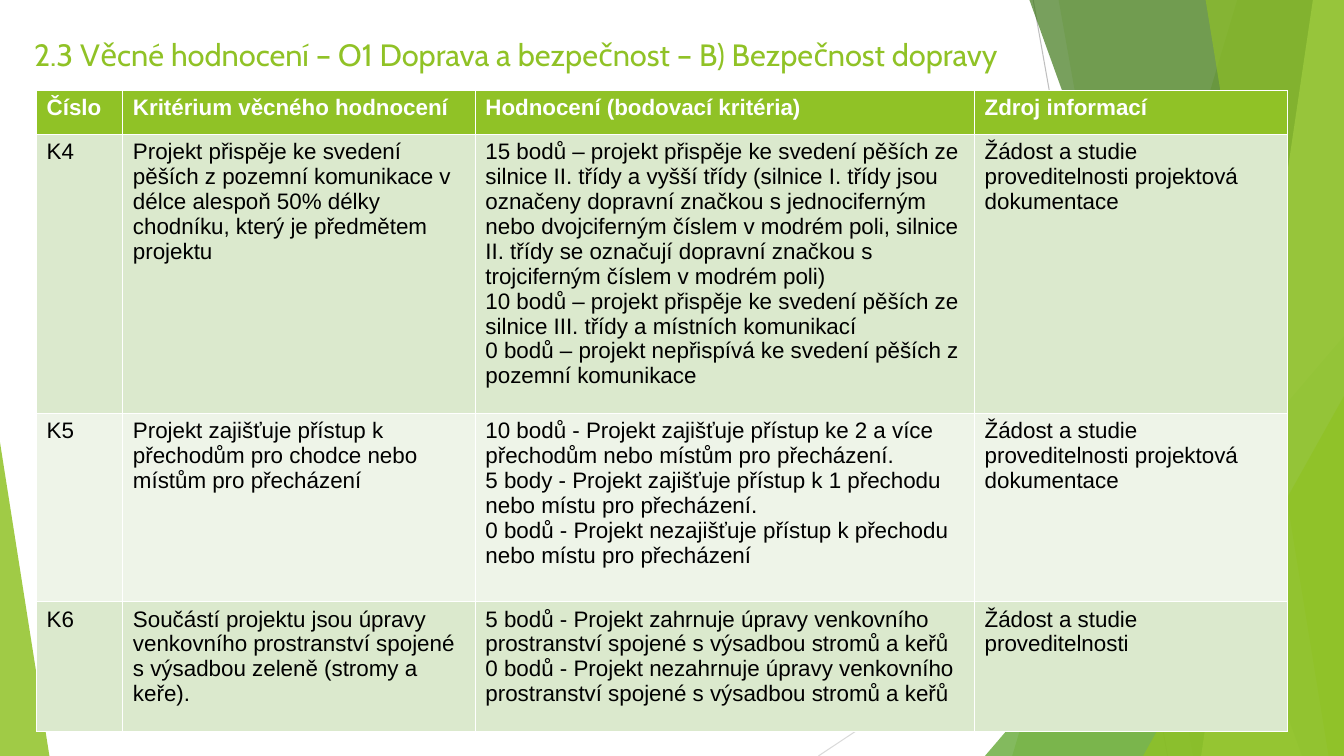
from dataclasses import dataclass

import lxml.etree
import pptx
import pptx.dml.color
import pptx.enum.shapes
import pptx.enum.text
import pptx.oxml.ns
import pptx.util

Pt = pptx.util.Pt
RGBColor = pptx.dml.color.RGBColor
qn = pptx.oxml.ns.qn

WHITE = RGBColor(0xFF, 0xFF, 0xFF)
BLACK = RGBColor(0x00, 0x00, 0x00)
LIME = RGBColor(0x90, 0xC2, 0x26)
GREEN = RGBColor(0x54, 0xA0, 0x21)
FOREST = RGBColor(0x3F, 0x78, 0x19)
PALE_LIME = RGBColor(0xC0, 0xE4, 0x74)
GRAY = RGBColor(0xBF, 0xBF, 0xBF)
LIGHT_GRAY = RGBColor(0xD9, 0xD9, 0xD9)
BAND_DARK = RGBColor(0xDB, 0xE9, 0xCD)
BAND_LIGHT = RGBColor(0xEE, 0xF4, 0xE8)

WIDTH, HEIGHT = 960, 540
BLEED = -0.6


@dataclass(frozen=True)
class Ray:
    start: tuple[float, float]
    end: tuple[float, float]
    color: RGBColor


@dataclass(frozen=True)
class Facet:
    top_left: float
    bottom_left: float
    color: RGBColor
    opacity: int


@dataclass(frozen=True)
class Triangle:
    left: float
    top: float
    width: float
    apex: float
    color: RGBColor
    opacity: int


RAYS = [
    Ray((738, 0), (834, HEIGHT), GRAY),
    Ray((WIDTH, 290), (584.6, HEIGHT), LIGHT_GRAY),
]
DECORATION = [
    Facet(884, 723, LIME, 30),
    Facet(756, 852, LIME, 20),
    Triangle(703.5, 240, 256.5, 1, GREEN, 72),
    Facet(735, 929.5, FOREST, 70),
    Facet(938, 858, PALE_LIME, 70),
    Facet(861, 949, LIME, 65),
    Triangle(816.5, 283, 143.5, 1, LIME, 80),
    Triangle(0, 316, 35.3, 0, LIME, 85),
]

TITLE = "2.3 Věcné hodnocení – O1 Doprava a bezpečnost – B) Bezpečnost dopravy"
COLUMN_WIDTHS = [61.6, 251.8, 356.6, 223.3]
ROW_HEIGHTS = [31.4, 197.6, 134.6, 92.8]
ROW_FILLS = [LIME, BAND_DARK, BAND_LIGHT, BAND_DARK]
CRITERIA = [
    ["Číslo", "Kritérium věcného hodnocení", "Hodnocení (bodovací kritéria)", "Zdroj informací"],
    [
        "K4",
        "Projekt přispěje ke svedení pěších z pozemní komunikace v délce alespoň 50% délky "
        "chodníku, který je předmětem projektu",
        "15 bodů – projekt přispěje ke svedení pěších ze silnice II. třídy a vyšší třídy "
        "(silnice I. třídy jsou označeny dopravní značkou s jednociferným nebo dvojciferným "
        "číslem v modrém poli, silnice II. třídy se označují dopravní značkou s trojciferným "
        "číslem v modrém poli)\n"
        "10 bodů – projekt přispěje ke svedení pěších ze silnice III. třídy a místních komunikací\n"
        "0 bodů – projekt nepřispívá ke svedení pěších z pozemní komunikace",
        "Žádost a studie proveditelnosti projektová dokumentace",
    ],
    [
        "K5",
        "Projekt zajišťuje přístup k přechodům pro chodce nebo místům pro přecházení",
        "10 bodů - Projekt zajišťuje přístup ke 2 a více přechodům nebo místům pro přecházení.\n"
        "5 body - Projekt zajišťuje přístup k 1 přechodu nebo místu pro přecházení.\n"
        "0 bodů - Projekt nezajišťuje přístup k přechodu nebo místu pro přecházení",
        "Žádost a studie proveditelnosti projektová dokumentace",
    ],
    [
        "K6",
        "Součástí projektu jsou úpravy venkovního prostranství spojené s výsadbou zeleně "
        "(stromy a keře).",
        "5 bodů - Projekt zahrnuje úpravy venkovního prostranství spojené s výsadbou stromů a keřů\n"
        "0 bodů - Projekt nezahrnuje úpravy venkovního prostranství spojené s výsadbou stromů a keřů",
        "Žádost a studie proveditelnosti",
    ],
]


def write_text(frame, text: str, color: RGBColor, formats: dict) -> None:
    frame.text = text
    for para in frame.paragraphs:
        for span in para.runs:
            for name, value in formats.items():
                setattr(span.font, name, value)
            span.font.color.rgb = color


def draw_ray(page, ray: Ray) -> None:
    line = page.shapes.add_connector(
        pptx.enum.shapes.MSO_CONNECTOR.STRAIGHT, *map(Pt, ray.start + ray.end)
    )
    line.line.color.rgb = ray.color
    line.line.width = Pt(0.75)
    lxml.etree.SubElement(line._element.spPr, qn("a:effectLst"))


def paint(shape, color: RGBColor, opacity: int) -> None:
    shape.shadow.inherit = False
    shape.line.fill.background()
    shape.fill.solid()
    shape.fill.fore_color.rgb = color
    tint = shape._element.spPr.find(qn("a:solidFill"))[0]
    lxml.etree.SubElement(tint, qn("a:alpha"), val=str(opacity * 1000))


def draw_facet(page, facet: Facet) -> None:
    outline = page.shapes.build_freeform(facet.top_left, BLEED, scale=Pt(1))
    outline.add_line_segments(
        [(WIDTH, BLEED), (WIDTH, HEIGHT), (facet.bottom_left, HEIGHT)], close=True
    )
    paint(outline.convert_to_shape(), facet.color, facet.opacity)


def draw_triangle(page, triangle: Triangle) -> None:
    shape = page.shapes.add_shape(
        pptx.enum.shapes.MSO_SHAPE.ISOSCELES_TRIANGLE,
        Pt(triangle.left), Pt(triangle.top),
        Pt(triangle.width), Pt(HEIGHT - triangle.top),
    )
    shape.adjustments[0] = triangle.apex
    paint(shape, triangle.color, triangle.opacity)


def draw_title(page) -> None:
    box = page.shapes.add_textbox(Pt(17.3), Pt(22.3), Pt(738), Pt(42.5))
    box.text_frame.word_wrap = True
    box.text_frame.vertical_anchor = pptx.enum.text.MSO_ANCHOR.TOP
    write_text(box.text_frame, TITLE, LIME, {"name": "Cabin", "size": Pt(22)})


def draw_criteria(page) -> None:
    table = page.shapes.add_table(
        len(ROW_HEIGHTS), len(COLUMN_WIDTHS),
        Pt(26.2), Pt(64.8), Pt(sum(COLUMN_WIDTHS)), Pt(sum(ROW_HEIGHTS)),
    ).table
    for column, width in zip(table.columns, COLUMN_WIDTHS):
        column.width = Pt(width)
    for index, (row, height) in enumerate(zip(table.rows, ROW_HEIGHTS)):
        row.height = Pt(height)
        header = index == 0
        formats = {"name": "Arial", "size": Pt(16), "bold": header}
        for cell, text in zip(row.cells, CRITERIA[index]):
            cell.fill.solid()
            cell.fill.fore_color.rgb = ROW_FILLS[index]
            write_text(cell.text_frame, text, WHITE if header else BLACK, formats)


def main() -> None:
    deck = pptx.Presentation()
    deck.slide_width, deck.slide_height = Pt(WIDTH), Pt(HEIGHT)
    page = deck.slides.add_slide(deck.slide_layouts[6])
    for ray in RAYS:
        draw_ray(page, ray)
    for item in DECORATION:
        if isinstance(item, Facet):
            draw_facet(page, item)
        else:
            draw_triangle(page, item)
    draw_title(page)
    draw_criteria(page)
    deck.save("out.pptx")


if __name__ == "__main__":
    main()
